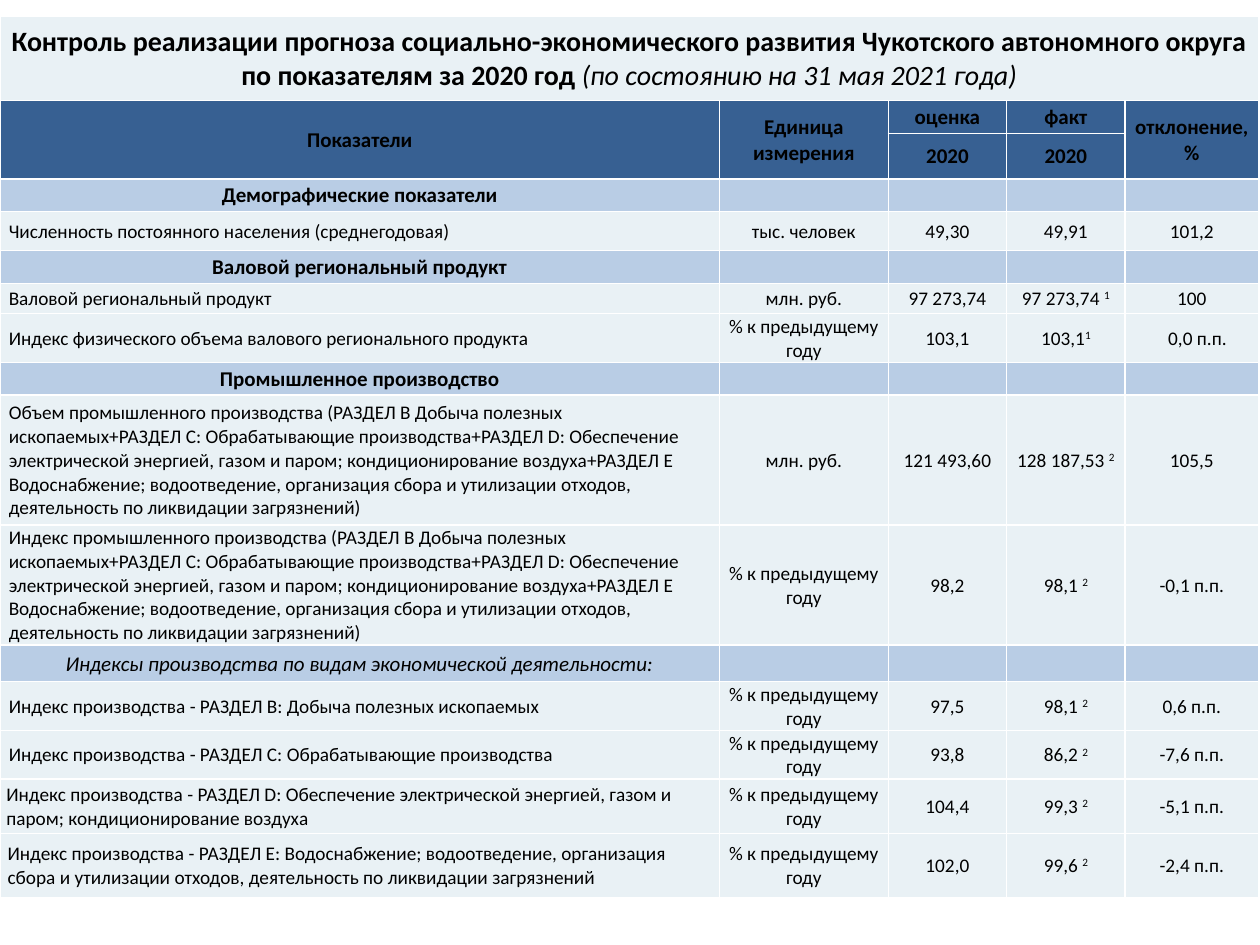
from dataclasses import dataclass

from lxml import etree
from pptx import Presentation
from pptx.dml.color import RGBColor
from pptx.enum.text import MSO_ANCHOR, PP_ALIGN
from pptx.oxml.ns import qn
from pptx.util import Inches, Pt

LEFT, CENTER = PP_ALIGN.LEFT, PP_ALIGN.CENTER
MIDDLE = MSO_ANCHOR.MIDDLE


@dataclass(frozen=True)
class Theme:
    font: str = "Calibri"
    text: str = "000000"
    header: str = "376092"
    section: str = "B9CDE5"
    body: str = "E9F1F5"
    border: str = "FFFFFF"
    title_size: int = 16
    header_size: int = 12
    body_size: int = 11
    inset: float = 0.01
    indent: float = 0.07


class SlideBuilder:
    def __init__(self, slide, theme):
        self.slide = slide
        self.theme = theme

    def table(self, left, top, widths, heights):
        shape = self.slide.shapes.add_table(
            len(heights), len(widths), Inches(left), Inches(top),
            Inches(sum(widths)), Inches(sum(heights)))
        table = shape.table
        table.first_row = table.horz_banding = False
        for column, width in zip(table.columns, widths):
            column.width = Inches(width)
        for row, height in zip(table.rows, heights):
            row.height = Inches(height)
        return table

    def borders(self, cell):
        properties = cell._tc.get_or_add_tcPr()
        for side in ("a:lnL", "a:lnR", "a:lnT", "a:lnB"):
            line = etree.SubElement(properties, qn(side), w=str(Pt(1)))
            fill = etree.SubElement(line, qn("a:solidFill"))
            etree.SubElement(fill, qn("a:srgbClr"), val=self.theme.border)

    def cell(self, cell, fill, inset=None):
        self.borders(cell)
        cell.fill.solid()
        cell.fill.fore_color.rgb = RGBColor.from_string(fill)
        cell.vertical_anchor = MIDDLE
        cell.margin_left = Inches(inset or self.theme.inset)
        cell.margin_right = cell.margin_top = Inches(self.theme.inset)
        cell.margin_bottom = 0

    def empty(self, cell, fill):
        self.cell(cell, fill)
        paragraph = cell.text_frame.paragraphs[0]
        size = str(self.theme.header_size * 100)
        etree.SubElement(paragraph._p, qn("a:endParaRPr"), sz=size)

    def text(self, cell, text, fill, size, bold=False, italic=False,
             align=CENTER, inset=None, note=""):
        self.cell(cell, fill, inset)
        paragraph = cell.text_frame.paragraphs[0]
        paragraph.alignment = align
        paragraph.add_run().text = text
        if note:
            run = paragraph.add_run()
            run.text = note
            run._r.get_or_add_rPr().set("baseline", "30000")
        self.style(paragraph, size, bold, italic)
        return paragraph

    def style(self, paragraph, size, bold, italic):
        for font in (paragraph.font, *(run.font for run in paragraph.runs)):
            font.name = self.theme.font
            font.size = Pt(size)
            font.bold = bold
            font.italic = italic
            font.color.rgb = RGBColor.from_string(self.theme.text)

    def title(self, table, lines, remark):
        table.cell(0, 0).merge(table.cell(0, len(table.columns) - 1))
        theme = self.theme
        paragraph = self.text(table.cell(0, 0), lines[0], theme.body, theme.title_size, bold=True)
        paragraph.add_line_break()
        paragraph.add_run().text = lines[1]
        self.style(paragraph, theme.title_size, True, False)
        run = paragraph.add_run()
        run.text = remark
        font = run.font
        font.name, font.size = theme.font, Pt(theme.title_size)
        font.bold, font.italic = False, True
        font.color.rgb = RGBColor.from_string(theme.text)

    def header(self, table, row, labels):
        for column, label in enumerate(labels):
            cell = table.cell(row, column)
            if label:
                self.text(cell, label, self.theme.header, self.theme.header_size, bold=True)
            else:
                self.empty(cell, self.theme.header)
                table.cell(row - 1, column).merge(cell)

    def section(self, table, row, label, italic=False):
        self.text(table.cell(row, 0), label, self.theme.section,
                  self.theme.header_size, bold=not italic, italic=italic)
        for column in range(1, len(table.columns)):
            self.empty(table.cell(row, column), self.theme.section)

    def indicator(self, table, row, name, unit, estimate, actual, note, deviation,
                  name_inset=None, deviation_inset=None):
        theme = self.theme
        self.text(table.cell(row, 0), name, theme.body, theme.body_size,
                  align=LEFT, inset=name_inset or theme.indent)
        for column, value in enumerate((unit, estimate, actual, deviation), start=1):
            self.text(table.cell(row, column), value, theme.body, theme.body_size,
                      note=note if column == 3 else "",
                      inset=deviation_inset if column == 4 else None)


WIDTHS = [5.71, 1.34, 0.94, 0.94, 1.06]
HEIGHTS = [0.67, 0.26, 0.36, 0.26, 0.31, 0.26, 0.24, 0.37,
           0.26, 1.03, 0.94, 0.29, 0.37, 0.37, 0.43, 0.51]
TITLE = ("Контроль реализации прогноза социально-экономического развития "
         "Чукотского автономного округа", "по показателям за 2020 год ")
REMARK = "(по состоянию на 31 мая 2021 года)"
HEADERS = [
    ("Показатели", "Единица измерения", "оценка", "факт", "отклонение, %"),
    ("", "", "2020", "2020", ""),
]
PERCENT = "% к предыдущему году"
MONEY = "млн. руб."
GROSS = "Валовой региональный продукт"
WASTE = "деятельность по ликвидации загрязнений"
INDUSTRY = ("промышленного производства (РАЗДЕЛ B Добыча полезных ископаемых+"
            "РАЗДЕЛ C: Обрабатывающие производства+РАЗДЕЛ D: Обеспечение "
            "электрической энергией, газом и паром; кондиционирование воздуха+"
            "РАЗДЕЛ E Водоснабжение; водоотведение, организация сбора и "
            f"утилизации отходов, {WASTE})")
INDEX = "Индекс производства - РАЗДЕЛ"
SECTIONS = [
    ("Демографические показатели", False, [
        ("Численность постоянного населения (среднегодовая)", "тыс. человек",
         "49,30", "49,91", "", "101,2"),
    ]),
    (GROSS, False, [
        (GROSS, MONEY, "97 273,74", "97 273,74 ", "1", "100"),
        ("Индекс физического объема валового регионального продукта", PERCENT,
         "103,1", "103,1", "1", "0,0 п.п.", None, 0.1),
    ]),
    ("Промышленное производство", False, [
        (f"Объем {INDUSTRY}", MONEY, "121 493,60", "128 187,53 ", "2", "105,5"),
        (f"Индекс {INDUSTRY}", PERCENT, "98,2", "98,1 ", "2", "-0,1 п.п."),
    ]),
    ("Индексы производства по видам экономической деятельности:", True, [
        (f"{INDEX} B: Добыча полезных ископаемых", PERCENT,
         "97,5", "98,1 ", "2", "0,6 п.п."),
        (f"{INDEX} C: Обрабатывающие производства", PERCENT,
         "93,8", "86,2 ", "2", "-7,6 п.п."),
        (f"{INDEX} D: Обеспечение электрической энергией, газом и паром; "
         "кондиционирование воздуха", PERCENT, "104,4", "99,3 ", "2", "-5,1 п.п.", 0.05),
        (f"{INDEX} E: Водоснабжение; водоотведение, организация сбора и "
         f"утилизации отходов, {WASTE}", PERCENT,
         "102,0", "99,6 ", "2", "-2,4 п.п.", 0.06),
    ]),
]


def main():
    presentation = Presentation()
    presentation.slide_width = Inches(10)
    presentation.slide_height = Inches(7.5)
    slide = presentation.slides.add_slide(presentation.slide_layouts[6])
    builder = SlideBuilder(slide, Theme())
    table = builder.table(0, 0.13, WIDTHS, HEIGHTS)
    builder.title(table, TITLE, REMARK)
    for row, labels in enumerate(HEADERS, start=1):
        builder.header(table, row, labels)
    row = len(HEADERS) + 1
    for label, italic, indicators in SECTIONS:
        builder.section(table, row, label, italic)
        for row, indicator in enumerate(indicators, start=row + 1):
            builder.indicator(table, row, *indicator)
        row += 1
    presentation.save("out.pptx")


if __name__ == "__main__":
    main()
